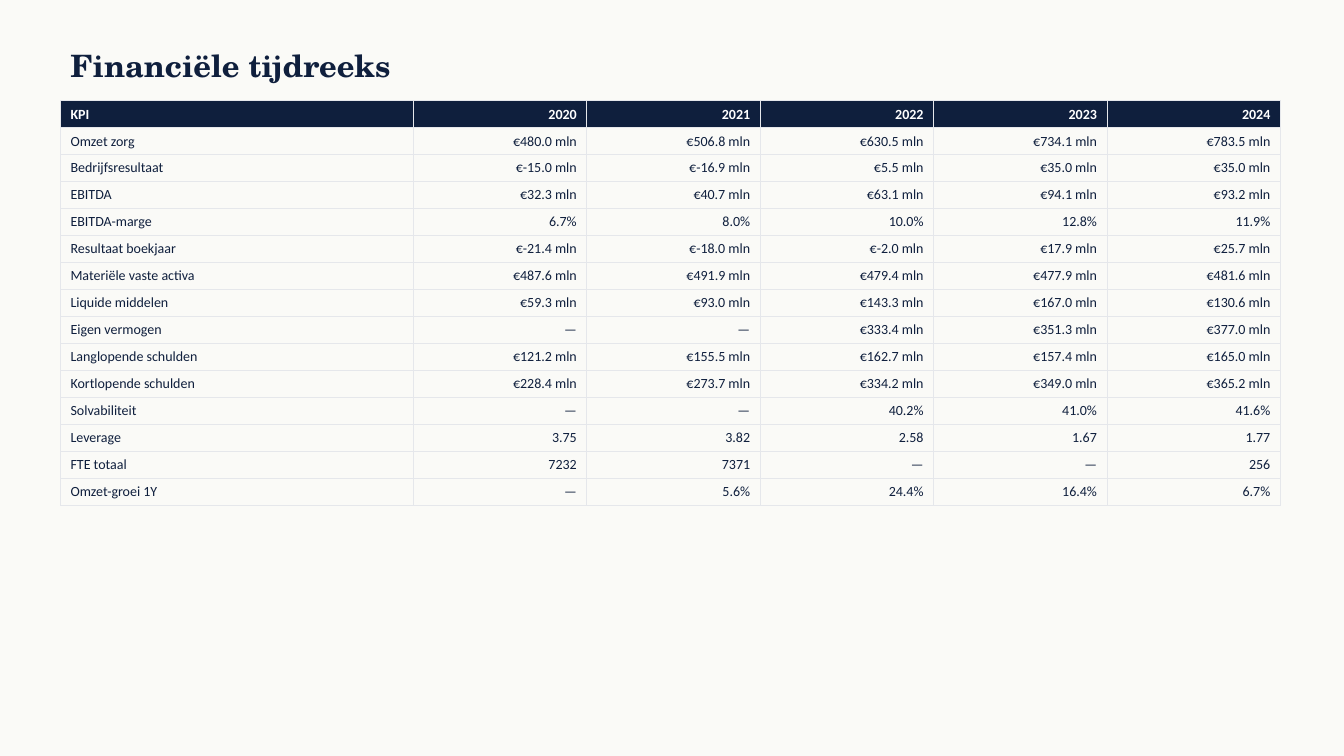
from lxml.etree import SubElement
from pptx import Presentation
from pptx.dml.color import RGBColor
from pptx.enum.text import MSO_ANCHOR, PP_ALIGN
from pptx.oxml.ns import qn
from pptx.util import Pt

PX = 9144  # EMU per px, 100 px to the inch
NAVY, WHITE, PAPER, GRID = "0F1F3D", "FFFFFF", "FAFAF7", "E5E7EB"
WIDTHS = [350] + [172] * 5
ROW = 26

DATA = [
    ["KPI", "2020", "2021", "2022", "2023", "2024"],
    ["Omzet zorg", "€480.0 mln", "€506.8 mln", "€630.5 mln", "€734.1 mln", "€783.5 mln"],
    ["Bedrijfsresultaat", "€-15.0 mln", "€-16.9 mln", "€5.5 mln", "€35.0 mln", "€35.0 mln"],
    ["EBITDA", "€32.3 mln", "€40.7 mln", "€63.1 mln", "€94.1 mln", "€93.2 mln"],
    ["EBITDA-marge", "6.7%", "8.0%", "10.0%", "12.8%", "11.9%"],
    ["Resultaat boekjaar", "€-21.4 mln", "€-18.0 mln", "€-2.0 mln", "€17.9 mln", "€25.7 mln"],
    ["Materiële vaste activa", "€487.6 mln", "€491.9 mln", "€479.4 mln", "€477.9 mln", "€481.6 mln"],
    ["Liquide middelen", "€59.3 mln", "€93.0 mln", "€143.3 mln", "€167.0 mln", "€130.6 mln"],
    ["Eigen vermogen", "—", "—", "€333.4 mln", "€351.3 mln", "€377.0 mln"],
    ["Langlopende schulden", "€121.2 mln", "€155.5 mln", "€162.7 mln", "€157.4 mln", "€165.0 mln"],
    ["Kortlopende schulden", "€228.4 mln", "€273.7 mln", "€334.2 mln", "€349.0 mln", "€365.2 mln"],
    ["Solvabiliteit", "—", "—", "40.2%", "41.0%", "41.6%"],
    ["Leverage", "3.75", "3.82", "2.58", "1.67", "1.77"],
    ["FTE totaal", "7232", "7371", "—", "—", "256"],
    ["Omzet-groei 1Y", "—", "5.6%", "24.4%", "16.4%", "6.7%"],
]


def px(*sizes):
    return [size * PX for size in sizes]


def paint(fill, color):
    fill.solid()
    fill.fore_color.rgb = RGBColor.from_string(color)


def write(frame, text, face, size, color, bold=False, align=PP_ALIGN.LEFT):
    frame.text = text
    par = frame.paragraphs[0]
    par.alignment = align
    for run in par.runs:
        font = run.font
        font.name, font.size, font.bold = face, Pt(size), bold
        paint(font.fill, color)


def add_title(slide, text):
    frame = slide.shapes.add_textbox(*px(60, 40, 1200, 50)).text_frame
    frame.word_wrap = True
    frame.vertical_anchor = MSO_ANCHOR.MIDDLE
    write(frame, text, "TeX Gyre Schola", 22, NAVY, bold=True)


def add_edges(cell):
    props = cell._tc.get_or_add_tcPr()
    for side in "LRTB":
        line = SubElement(props, qn(f"a:ln{side}"), w=str(Pt(0.5)))
        fill = SubElement(line, qn("a:solidFill"))
        SubElement(fill, qn("a:srgbClr"), val=GRID)


def add_grid(slide, data):
    size = px(60, 100, sum(WIDTHS), ROW * len(data))
    table = slide.shapes.add_table(len(data), len(WIDTHS), *size).table
    table.horz_banding = False
    for col, width in zip(table.columns, WIDTHS):
        col.width = width * PX
    for i, row in enumerate(data):
        head = i == 0
        for j, text in enumerate(row):
            cell = table.cell(i, j)
            add_edges(cell)
            if head:
                paint(cell.fill, NAVY)
            else:
                cell.fill.background()
            write(cell.text_frame, text, "Calibri", 10, WHITE if head else NAVY,
                  bold=head, align=PP_ALIGN.RIGHT if j else PP_ALIGN.LEFT)


def main():
    # Slide and background
    deck = Presentation()
    deck.slide_width, deck.slide_height = px(1333, 750)
    slide = deck.slides.add_slide(deck.slide_layouts[6])
    paint(slide.background.fill, PAPER)

    # Title and table of yearly figures
    add_title(slide, "Financiële tijdreeks")
    add_grid(slide, DATA)
    deck.save("out.pptx")


if __name__ == "__main__":
    main()
